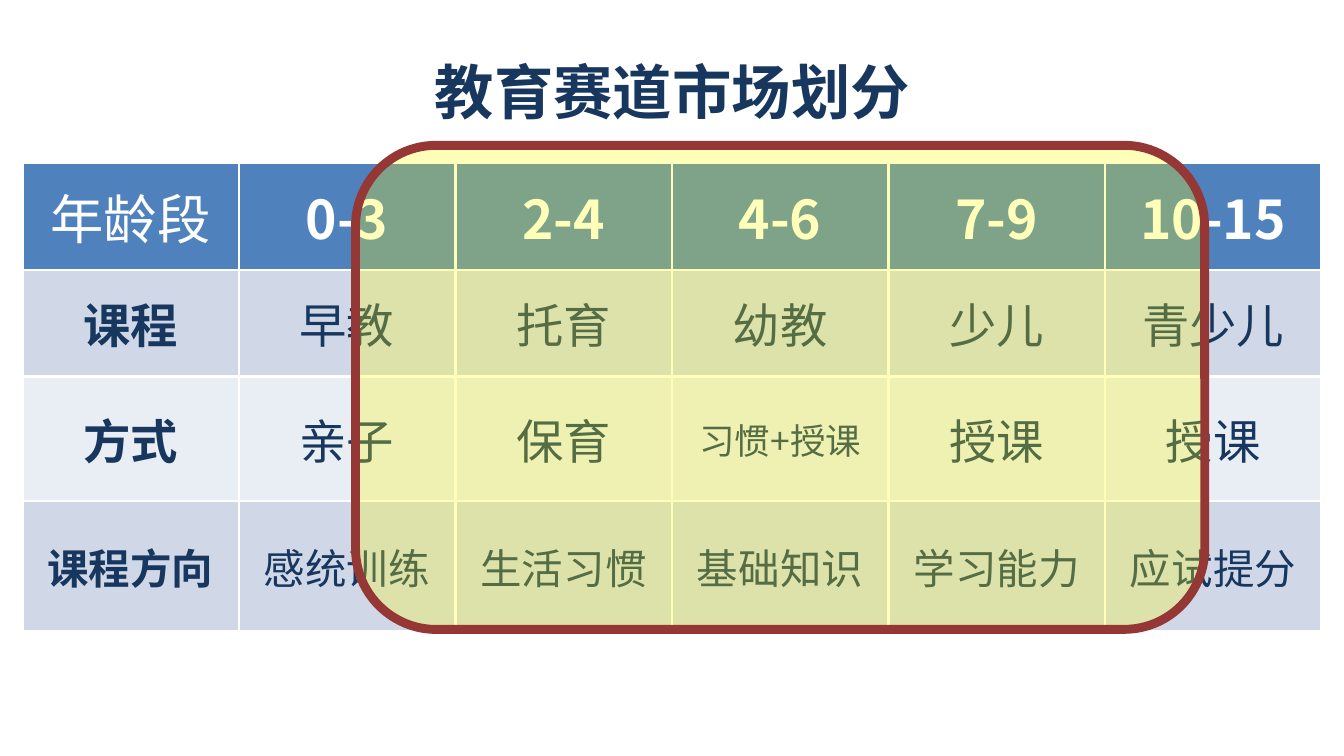
"""Build a one-slide overview of the education market by age group."""
from lxml.etree import SubElement
from pptx import Presentation
from pptx.dml.color import RGBColor
from pptx.enum.shapes import MSO_SHAPE
from pptx.enum.text import MSO_ANCHOR, MSO_AUTO_SIZE, PP_ALIGN
from pptx.oxml.ns import qn
from pptx.util import Pt

FONT = "Noto Sans CJK SC"
NAVY, WHITE, BLUE = "17375E", "FFFFFF", "4F81BD"
ROWS = [
    ["年龄段", "0-3", "2-4", "4-6", "7-9", "10-15"],
    ["课程", "早教", "托育", "幼教", "少儿", "青少儿"],
    ["方式", "亲子", "保育", "习惯+授课", "授课", "授课"],
    ["课程方向", "感统训练", "生活习惯", "基础知识", "学习能力", "应试提分"],
]
ROW_FILLS = [BLUE, "D0D8E8", "E9EDF4", "D0D8E8"]
ROW_SIZES = [18, 16, 16, 14]
ROW_HEIGHTS = [36, 36, 36, 44]
COLUMN_WIDTH = 73.1


def color(value):
    return RGBColor.from_string(value)


def format_paragraph(paragraph, size, text_color, bold, align):
    paragraph.alignment = align
    for run in paragraph.runs:
        run.font.size = Pt(size)
        run.font.bold = bold
        run.font.name = FONT
        run.font.color.rgb = color(text_color)
        SubElement(run.font._element, qn("a:ea"), typeface=FONT)


def add_title(slide, text):
    title = slide.shapes.title
    title.left, title.top, title.width, title.height = Pt(136.8), Pt(21), Pt(208), Pt(22)
    frame = title.text_frame
    frame.text = text
    frame.auto_size = MSO_AUTO_SIZE.NONE
    frame.word_wrap = True
    frame.vertical_anchor = MSO_ANCHOR.MIDDLE
    frame.margin_left, frame.margin_right = Pt(10), Pt(3.6)
    frame.margin_top = frame.margin_bottom = Pt(1.8)
    paragraph = frame.paragraphs[0]
    paragraph.line_spacing = 0.9
    format_paragraph(paragraph, 20, NAVY, True, PP_ALIGN.LEFT)


def set_borders(cell, border_color, width):
    properties = cell._tc.get_or_add_tcPr()
    for side in ("a:lnL", "a:lnR", "a:lnT", "a:lnB"):
        line = SubElement(properties, qn(side), w=str(Pt(width)))
        fill = SubElement(line, qn("a:solidFill"))
        SubElement(fill, qn("a:srgbClr"), val=border_color)


def fill_cell(cell, text, row, column):
    cell.text = text
    cell.vertical_anchor = MSO_ANCHOR.MIDDLE
    set_borders(cell, WHITE, 1)
    cell.fill.solid()
    cell.fill.fore_color.rgb = color(ROW_FILLS[row])
    is_header, is_label = row == 0, column == 0
    size = 12 if "+" in text else ROW_SIZES[row]
    format_paragraph(cell.text_frame.paragraphs[0], size, WHITE if is_header else NAVY,
                     is_header != is_label, PP_ALIGN.CENTER)


def add_market_table(slide):
    columns = len(ROWS[0])
    table = slide.shapes.add_table(len(ROWS), columns, Pt(7.5), Pt(55),
                                   Pt(columns * COLUMN_WIDTH), Pt(sum(ROW_HEIGHTS))).table
    for column in table.columns:
        column.width = Pt(COLUMN_WIDTH)
    for row, texts in enumerate(ROWS):
        table.rows[row].height = Pt(ROW_HEIGHTS[row])
        for column, text in enumerate(texts):
            fill_cell(table.cell(row, column), text, row, column)


def add_highlight(slide):
    highlight = slide.shapes.add_shape(MSO_SHAPE.ROUNDED_RECTANGLE,
                                       Pt(120), Pt(49), Pt(286.6), Pt(163.3))
    highlight.shadow.inherit = False
    highlight.fill.solid()
    highlight.fill.fore_color.rgb = color("FFFF00")
    fill_color = highlight._element.spPr.find(qn("a:solidFill"))[0]
    SubElement(fill_color, qn("a:alpha"), val="27000")
    highlight.line.color.rgb = color("953735")
    highlight.line.width = Pt(3)


def main():
    presentation = Presentation()
    presentation.slide_width, presentation.slide_height = Pt(453.6), Pt(255)
    slide = presentation.slides.add_slide(presentation.slide_layouts[5])
    add_title(slide, "教育赛道市场划分")
    add_market_table(slide)
    add_highlight(slide)
    presentation.save("out.pptx")


if __name__ == "__main__":
    main()
